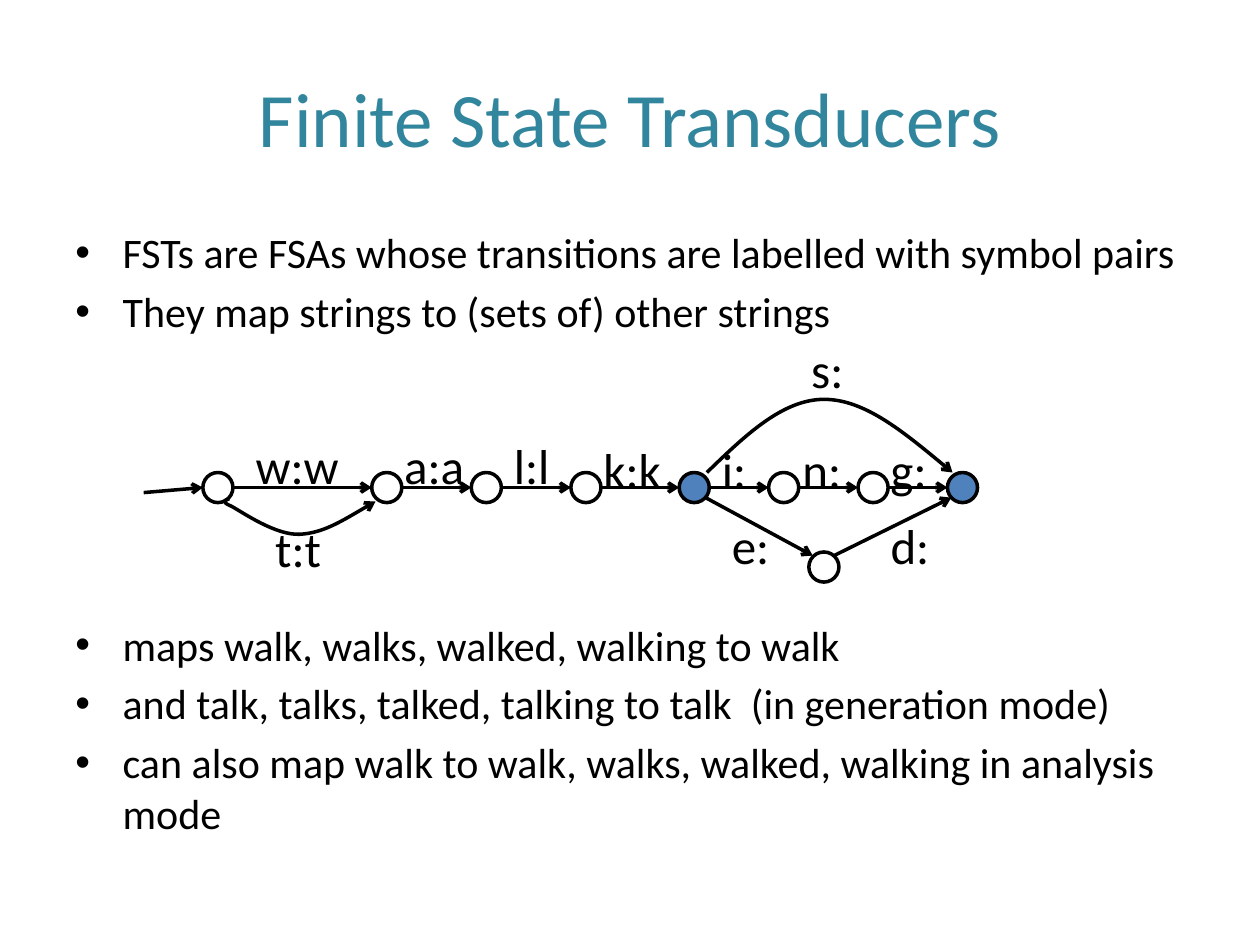
from dataclasses import dataclass
from itertools import pairwise

from lxml.etree import SubElement
from pptx import Presentation
from pptx.dml.color import RGBColor
from pptx.enum.shapes import MSO_CONNECTOR, MSO_SHAPE
from pptx.enum.text import MSO_ANCHOR, PP_ALIGN
from pptx.oxml.ns import qn
from pptx.util import Pt


@dataclass(frozen=True)
class Theme:
    font: str = "Calibri"
    title_color: RGBColor = RGBColor(0x31, 0x85, 0x9C)
    ink: RGBColor = RGBColor(0, 0, 0)
    final_fill: RGBColor = RGBColor(0x4F, 0x81, 0xBD)
    title_size: float = 44
    body_size: float = 24
    label_size: float = 28
    stroke: float = 2


@dataclass(frozen=True)
class State:
    left: float
    top: float = 270
    final: bool = False


@dataclass(frozen=True)
class Label:
    text: str
    left: float
    top: float
    width: float


THEME = Theme()
DIAMETER = 17.2
LABEL_HEIGHT = 41
INDENT = 27
BULLET_GAP = 4.8
DIAGRAM_GAP = 161.9

# States along the main row, and the one below it
ROW = [
    State(115.9), State(212.4), State(269.3), State(326.2),
    State(388.1, final=True), State(439.2), State(490.3),
    State(541.4, final=True),
]
LOWER = State(462.2, top=315.4)
AXIS = ROW[0].top + DIAMETER / 2

# Straight arrows outside the row: entry, e: and d:
SLANTED = [
    ((82.1, 281.5), (ROW[0].left, AXIS)),
    ((403.2, 284.4), (464.4, 317.5)),
    ((476.6, 317.5), (543.6, 284.4)),
]

# Each arc is a start point followed by triples of Bézier points
ARCS = [
    [(403.9, 270), (425.5, 249.1), (447.1, 228.2), (470.9, 228.2),
     (493.9, 228.2), (519.1, 249.1), (544.3, 270)],
    [(131, 285.1), (128.2, 285.8), (126, 286.6), (132.5, 289.4),
     (139, 293), (157.7, 306), (171.4, 305.3),
     (185, 304.6), (199.4, 295.2), (214.6, 286.6)],
]

LABELS = [
    Label("w:w", 139, 245.1, 67.7),
    Label("a:a", 223.9, 245.1, 50.4),
    Label("l:l", 286.6, 245.1, 38.9),
    Label("k:k", 337.7, 247.7, 56.9),
    Label("i:", 405.4, 247.7, 33.1),
    Label("n:", 451.4, 247.7, 44.6),
    Label("g:", 501.8, 247.7, 45.4),
    Label("s:", 456.5, 190.5, 33.8),
    Label("e:", 411.1, 290.9, 39.6),
    Label("d:", 501.8, 290.9, 39.6),
    Label("t:t", 150.2, 292.6, 45.4),
]

# Bullet text and the space above it, leaving room for the diagram
BULLETS = [
    ("FSTs are FSAs whose transitions are labelled with symbol pairs", BULLET_GAP),
    ("They map strings to (sets of) other strings", BULLET_GAP),
    ("maps walk, walks, walked, walking to walk", DIAGRAM_GAP),
    ("and talk, talks, talked, talking to talk  (in generation mode)", BULLET_GAP),
    ("can also map walk to walk, walks, walked, walking in analysis mode", BULLET_GAP),
]


def write(para, text: str, *, size: float, color=THEME.ink, align=PP_ALIGN.LEFT) -> None:
    para.alignment = align
    span = para.add_run()
    span.text = text
    span.font.name = THEME.font
    span.font.size = Pt(size)
    span.font.color.rgb = color


def add_bullet(para) -> None:
    properties = para._p.get_or_add_pPr()
    properties.set("marL", str(Pt(INDENT)))
    properties.set("indent", str(-Pt(INDENT)))
    SubElement(properties, qn("a:buFont"), typeface="Arial")
    SubElement(properties, qn("a:buChar"), char="•")


def draw_stroke(item, *, arrow: bool = False) -> None:
    item.line.color.rgb = THEME.ink
    item.line.width = Pt(THEME.stroke)
    if arrow:
        outline = item.element.spPr.find(qn("a:ln"))
        SubElement(outline, qn("a:tailEnd"), type="arrow")


def draw_state(page, state: State) -> None:
    circle = page.shapes.add_shape(
        MSO_SHAPE.OVAL, Pt(state.left), Pt(state.top), Pt(DIAMETER), Pt(DIAMETER))
    circle.shadow.inherit = False
    if state.final:
        circle.fill.solid()
        circle.fill.fore_color.rgb = THEME.final_fill
    else:
        circle.fill.background()
    draw_stroke(circle)


def draw_arrow(page, start: tuple[float, float], end: tuple[float, float]) -> None:
    arrow = page.shapes.add_connector(
        MSO_CONNECTOR.STRAIGHT, *(Pt(value) for value in (*start, *end)))
    draw_stroke(arrow, arrow=True)
    SubElement(arrow.element.spPr, qn("a:effectLst"))


def draw_arc(page, points: list[tuple[float, float]]) -> None:
    first, *rest = [(Pt(x), Pt(y)) for x, y in points]
    builder = page.shapes.build_freeform(*first)
    builder.add_line_segments(rest, close=False)
    arc = builder.convert_to_shape()
    # Turn every three straight segments into one cubic curve
    outline = arc.element.spPr.find(".//" + qn("a:path"))
    segments = outline.findall(qn("a:lnTo"))
    for index in range(0, len(segments), 3):
        curve = SubElement(outline, qn("a:cubicBezTo"))
        for segment in segments[index:index + 3]:
            curve.append(segment[0])
            outline.remove(segment)
    arc.shadow.inherit = False
    arc.fill.background()
    draw_stroke(arc, arrow=True)


def draw_label(page, label: Label) -> None:
    box = page.shapes.add_textbox(
        Pt(label.left), Pt(label.top), Pt(label.width), Pt(LABEL_HEIGHT))
    box.text_frame.word_wrap = False
    write(box.text_frame.paragraphs[0], label.text, size=THEME.label_size)


def draw_title(page, text: str) -> None:
    title = page.shapes.title
    title.left, title.top, title.width, title.height = Pt(36), Pt(21.6), Pt(648), Pt(90)
    title.text_frame.vertical_anchor = MSO_ANCHOR.MIDDLE
    write(title.text_frame.paragraphs[0], text, size=THEME.title_size,
          color=THEME.title_color, align=PP_ALIGN.CENTER)


def draw_bullets(page) -> None:
    box = page.shapes.add_textbox(Pt(36), Pt(126), Pt(648), Pt(356.4))
    frame = box.text_frame
    frame.word_wrap = True
    for index, (text, gap) in enumerate(BULLETS):
        para = frame.add_paragraph() if index else frame.paragraphs[0]
        para.space_before = Pt(gap)
        add_bullet(para)
        write(para, text, size=THEME.body_size)


def main() -> None:
    deck = Presentation()
    deck.slide_width, deck.slide_height = Pt(720), Pt(540)
    page = deck.slides.add_slide(deck.slide_layouts.get_by_name("Title Only"))
    draw_title(page, "Finite State Transducers")
    draw_bullets(page)

    # Transducer diagram
    for state in [*ROW, LOWER]:
        draw_state(page, state)
    for source, target in pairwise(ROW):
        draw_arrow(page, (source.left + DIAMETER, AXIS), (target.left, AXIS))
    for start, end in SLANTED:
        draw_arrow(page, start, end)
    for points in ARCS:
        draw_arc(page, points)
    for label in LABELS:
        draw_label(page, label)
    deck.save("out.pptx")


if __name__ == "__main__":
    main()
